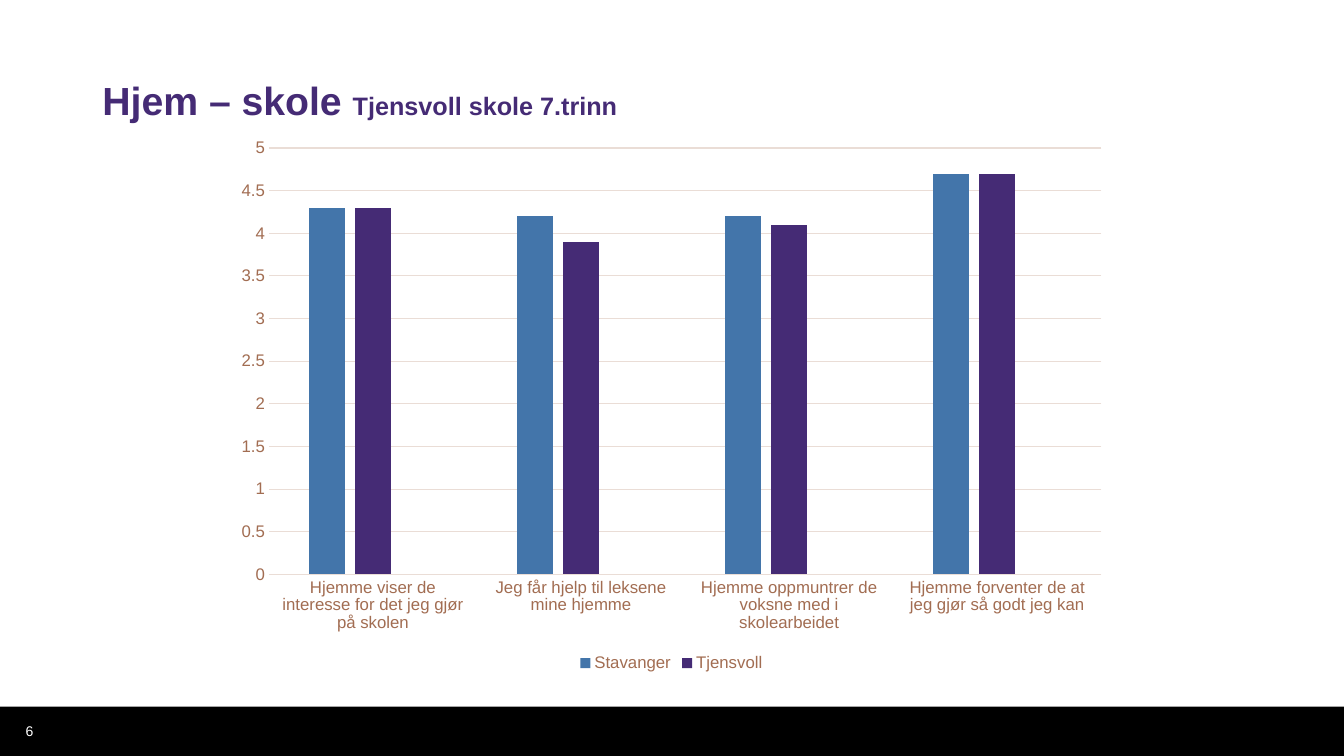
from dataclasses import dataclass
from typing import Any, Optional

from lxml import etree
from pptx import Presentation
from pptx import util as u
from pptx.chart import data as cd
from pptx.dml.color import RGBColor
from pptx.enum import chart as ch, shapes, text
from pptx.oxml import parse_xml
from pptx.oxml.ns import nsdecls

PX = 9525
FONT = "Arial"
BLACK = RGBColor(0x00, 0x00, 0x00)
WHITE = RGBColor(0xFF, 0xFF, 0xFF)
PURPLE = RGBColor(0x45, 0x2B, 0x75)
BLUE = RGBColor(0x43, 0x75, 0xAA)
CORAL = RGBColor(0xFF, 0x56, 0x45)
BROWN = RGBColor(0xA2, 0x6D, 0x52)
DARK_BROWN = RGBColor(0x43, 0x2D, 0x22)
SAND = RGBColor(0xEA, 0xDD, 0xD6)


@dataclass(frozen=True)
class Box:
    left: int
    top: int
    width: int
    height: int

    def emu(self) -> tuple[int, ...]:
        return tuple(v * PX for v in (self.left, self.top, self.width, self.height))


@dataclass(frozen=True)
class Series:
    name: str
    values: tuple[Optional[float], ...]
    color: RGBColor


TITLE = Box(88, 52, 1104, 71)
FOOTER = Box(0, 673, 1280, 47)
NUMBER = Box(15, 677, 50, 38)
CHART = Box(213, 122, 853, 522)

CATEGORIES = (
    "Hjemme viser de interesse for det jeg gjør på skolen",
    "Jeg får hjelp til leksene mine hjemme",
    "Hjemme oppmuntrer de voksne med i skolearbeidet",
    "Hjemme forventer de at jeg gjør så godt jeg kan",
)
SERIES = (
    Series("Stavanger", (4.3, 4.2, 4.2, 4.7), BLUE),
    Series("Tjensvoll", (4.3, 3.9, 4.1, 4.7), PURPLE),
    Series("Series 3", (None,) * 4, CORAL),
)


def set_attrs(obj: Any, values: dict[str, Any]) -> None:
    for name, value in values.items():
        setattr(obj, name, value)


def set_font(font: Any, size: int, color: RGBColor, bold: bool = False) -> None:
    set_attrs(font, {"name": FONT, "size": u.Pt(size), "bold": bold})
    font.color.rgb = color


def set_line(line: Any) -> None:
    line.color.rgb = SAND
    line.width = u.Pt(0.75)


def add_title(s: Any) -> None:
    sp = s.shapes.title
    set_attrs(sp, dict(zip(("left", "top", "width", "height"), TITLE.emu())))
    tf = sp.text_frame
    set_attrs(tf, {"vertical_anchor": text.MSO_ANCHOR.BOTTOM, "word_wrap": True,
                   "auto_size": text.MSO_AUTO_SIZE.NONE})
    p = tf.paragraphs[0]
    set_attrs(p, {"alignment": text.PP_ALIGN.LEFT, "line_spacing": 0.9})
    for words, size in (("Hjem – skole ", 28), ("Tjensvoll skole 7.trinn", 18)):
        r = p.add_run()
        r.text = words
        set_font(r.font, size, PURPLE, True)


def add_footer(s: Any) -> None:
    sp = s.shapes.add_shape(shapes.MSO_SHAPE.RECTANGLE, *FOOTER.emu())
    sp.shadow.inherit = False
    sp.fill.solid()
    sp.fill.fore_color.rgb = BLACK
    sp.line.fill.background()

    tf = s.shapes.add_textbox(*NUMBER.emu()).text_frame
    set_attrs(tf, {"word_wrap": True, "vertical_anchor": text.MSO_ANCHOR.MIDDLE})
    r = tf.paragraphs[0].add_run()
    r.text = "6"
    set_font(r.font, 10, WHITE)


def hide_legend_entry(legend: Any, index: int) -> None:
    entry = parse_xml(f'<c:legendEntry {nsdecls("c")}><c:idx val="{index}"/>'
                      '<c:delete val="1"/></c:legendEntry>')
    position = next(e for e in legend._element
                    if etree.QName(e).localname == "legendPos")
    position.addnext(entry)


def add_survey_chart(s: Any) -> None:
    data = cd.CategoryChartData()
    data.categories = CATEGORIES
    for series in SERIES:
        data.add_series(series.name, series.values)
    chart = s.shapes.add_chart(
        ch.XL_CHART_TYPE.COLUMN_CLUSTERED, *CHART.emu(), data).chart
    set_attrs(chart, {"has_title": False, "has_legend": True})
    set_font(chart.font, 10, DARK_BROWN)

    plot = chart.plots[0]
    set_attrs(plot, {"gap_width": 219, "overlap": -27, "vary_by_categories": False})
    for drawn, series in zip(plot.series, SERIES):
        drawn.format.fill.solid()
        drawn.format.fill.fore_color.rgb = series.color

    for axis in (chart.category_axis, chart.value_axis):
        set_attrs(axis, {"major_tick_mark": ch.XL_TICK_MARK.NONE,
                         "minor_tick_mark": ch.XL_TICK_MARK.NONE})
        set_font(axis.tick_labels.font, 12, BROWN)
    set_line(chart.category_axis.format.line)
    values = chart.value_axis
    set_attrs(values, {"minimum_scale": 0, "maximum_scale": 5, "major_unit": 0.5,
                       "has_major_gridlines": True})
    values.format.line.fill.background()
    set_line(values.major_gridlines.format.line)

    legend = chart.legend
    set_attrs(legend, {"position": ch.XL_LEGEND_POSITION.BOTTOM,
                       "include_in_layout": False})
    set_font(legend.font, 12, BROWN)
    hide_legend_entry(legend, 2)


def main() -> None:
    prs = Presentation()
    set_attrs(prs, {"slide_width": 1280 * PX, "slide_height": 720 * PX})
    s = prs.slides.add_slide(prs.slide_layouts.get_by_name("Title Only"))
    add_title(s)
    add_footer(s)
    add_survey_chart(s)
    prs.save("out.pptx")


if __name__ == "__main__":
    main()
